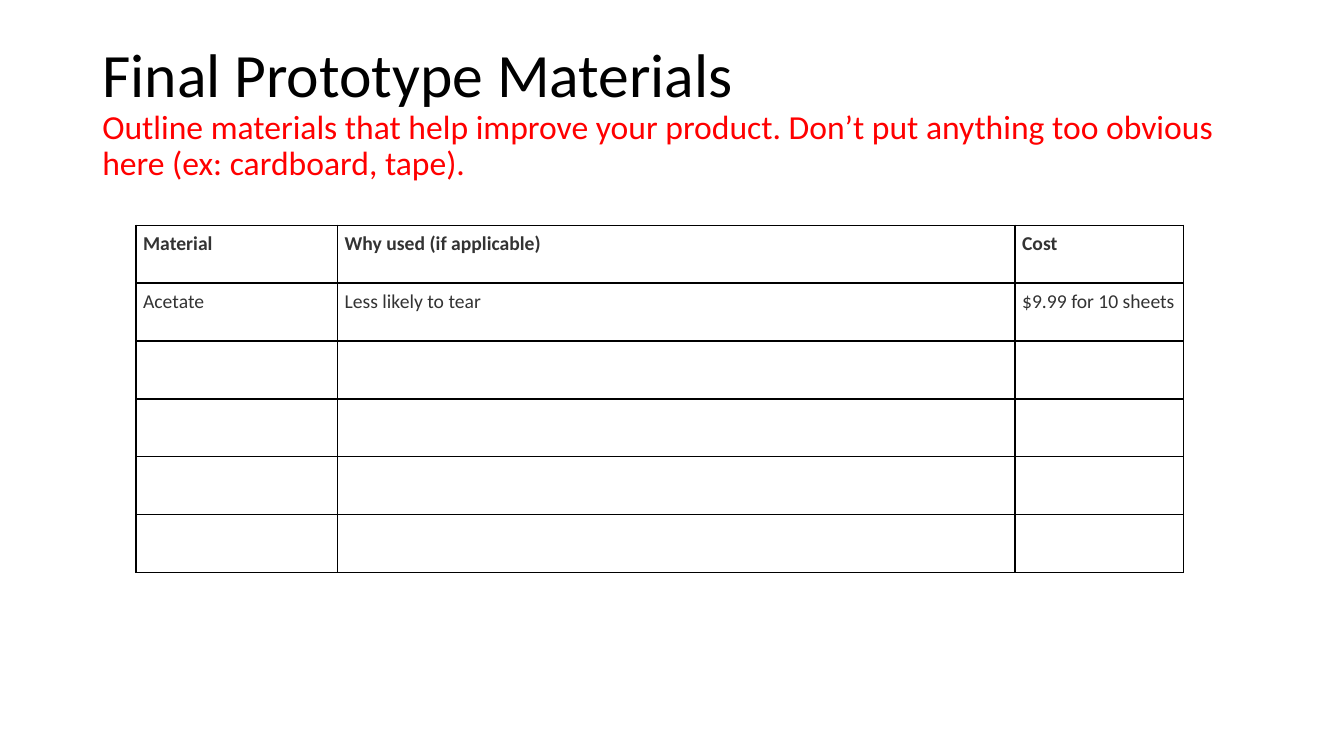
from lxml import etree
from pptx import Presentation
from pptx.dml.color import RGBColor
from pptx.enum.text import MSO_ANCHOR
from pptx.oxml.ns import qn
from pptx.util import Inches, Pt

MIDDLE = MSO_ANCHOR.MIDDLE
BLACK = RGBColor(0x00, 0x00, 0x00)
RED = RGBColor(0xFF, 0x00, 0x00)
CHARCOAL = RGBColor(0x33, 0x33, 0x33)

# The slide is a grid of 160 columns by 90 rows
GRID_COLUMNS, GRID_ROWS = 160, 90

HEADING = [
    ("Final Prototype Materials", 44, BLACK),
    ("Outline materials that help improve your product. "
     "Don’t put anything too obvious here (ex: cardboard, tape).", 24, RED),
]
MATERIALS = [
    ("Material", "Why used (if applicable)", "Cost"),
    ("Acetate", "Less likely to tear", "$9.99 for 10 sheets"),
]
EMPTY_ROWS = 4


class SlideBuilder:
    """Holds the style and the current slide."""

    font_name = "Calibri"
    cell_size = 14
    cell_margin = Inches(0.07)
    border_width = Pt(1)

    def __init__(self, deck):
        self.column = deck.slide_width / GRID_COLUMNS
        self.row = deck.slide_height / GRID_ROWS
        self.slide = deck.slides.add_slide(deck.slide_layouts[6])

    def across(self, columns):
        return round(columns * self.column)

    def down(self, rows):
        return round(rows * self.row)

    def style(self, paragraph, size, color, bold=False):
        font = paragraph.font
        font.name, font.size, font.bold = self.font_name, Pt(size), bold
        font.color.rgb = color

    def heading(self, left, top, width, height, lines):
        box = self.slide.shapes.add_textbox(
            self.across(left), self.down(top), self.across(width), self.down(height))
        frame = box.text_frame
        frame.word_wrap = True
        frame.vertical_anchor = MIDDLE
        for index, (text, size, color) in enumerate(lines):
            paragraph = frame.add_paragraph() if index else frame.paragraphs[0]
            paragraph.text = text
            paragraph.line_spacing = 0.9
            self.style(paragraph, size, color)

    def table(self, left, top, widths, row_height, records):
        table = self.slide.shapes.add_table(
            len(records), len(widths), self.across(left), self.down(top),
            self.across(sum(widths)), self.down(row_height * len(records))).table
        table.first_row = table.horz_banding = False
        for column, width in zip(table.columns, widths):
            column.width = self.across(width)
        for row_index, (row, record) in enumerate(zip(table.rows, records)):
            row.height = self.down(row_height)
            for cell, text in zip(row.cells, record):
                self.cell(cell, text, bold=row_index == 0)

    def cell(self, cell, text, bold):
        cell.margin_left = cell.margin_right = self.cell_margin
        cell.margin_top = cell.margin_bottom = self.cell_margin
        cell.text = text
        self.style(cell.text_frame.paragraphs[0], self.cell_size, CHARCOAL, bold)
        # Borders come before the fill in the cell properties
        properties = cell._tc.get_or_add_tcPr()
        for side in ("a:lnL", "a:lnR", "a:lnT", "a:lnB"):
            line = etree.SubElement(properties, qn(side), w=str(self.border_width))
            fill = etree.SubElement(line, qn("a:solidFill"))
            etree.SubElement(fill, qn("a:srgbClr"), val=str(BLACK))
        cell.fill.background()


def main():
    deck = Presentation()
    deck.slide_width, deck.slide_height = Inches(13.33), Inches(7.5)
    page = SlideBuilder(deck)

    # Title and instruction
    page.heading(11, 4.8, 138, 17.4, HEADING)

    # Materials table with room for more entries
    records = MATERIALS + [("", "", "")] * EMPTY_ROWS
    page.table(16.2, 26.8, (24, 80.65, 20.05), 6.9, records)

    deck.save("out.pptx")


if __name__ == "__main__":
    main()
